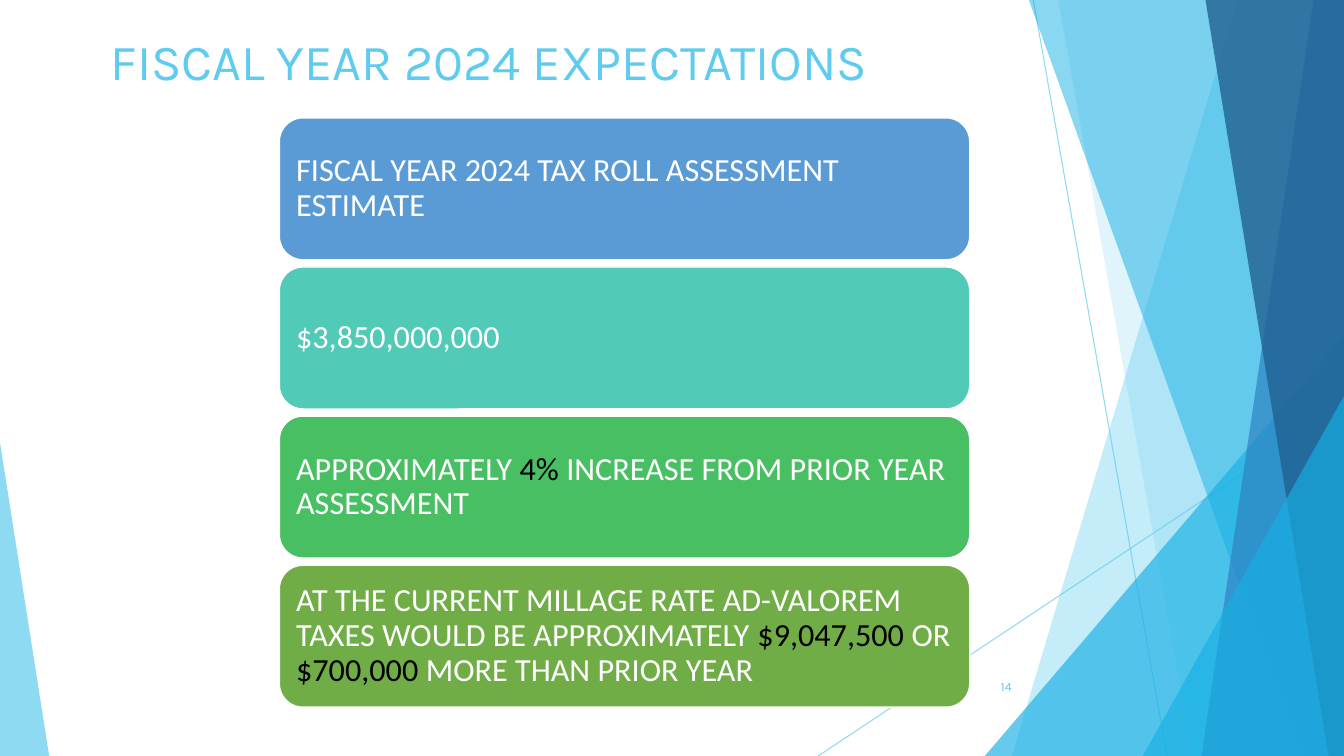
from lxml.etree import SubElement
from pptx import Presentation
from pptx.dml.color import RGBColor
from pptx.enum.shapes import MSO_CONNECTOR, MSO_SHAPE
from pptx.enum.text import MSO_ANCHOR, PP_ALIGN
from pptx.oxml.ns import qn
from pptx.util import Cm, Pt

WIDTH, HEIGHT = 33.87, 19.05  # slide size in centimetres

WHITE = RGBColor(0xFF, 0xFF, 0xFF)
BLACK = RGBColor(0x00, 0x00, 0x00)
SKY = RGBColor(0x5F, 0xCB, 0xEF)
CYAN = RGBColor(0x17, 0xB0, 0xE4)
BLUE = RGBColor(0x2E, 0x83, 0xC3)
NAVY = RGBColor(0x22, 0x62, 0x92)
CARD_BLUE = RGBColor(0x5B, 0x9B, 0xD5)
CARD_TEAL = RGBColor(0x52, 0xCA, 0xB8)
CARD_GREEN = RGBColor(0x49, 0xBF, 0x64)
CARD_OLIVE = RGBColor(0x70, 0xAD, 0x47)

# Each card: fill, then (text, colour) runs
CARDS = [
    (CARD_BLUE, [("FISCAL YEAR 2024 TAX ROLL ASSESSMENT ESTIMATE", WHITE)]),
    (CARD_TEAL, [("$3,850,000,000", WHITE)]),
    (CARD_GREEN, [("APPROXIMATELY ", WHITE), ("4%", BLACK),
                  (" INCREASE FROM PRIOR YEAR ASSESSMENT", WHITE)]),
    (CARD_OLIVE, [("AT THE CURRENT MILLAGE RATE AD-VALOREM TAXES WOULD BE APPROXIMATELY ", WHITE),
                  ("$9,047,500 ", BLACK), ("OR ", WHITE),
                  ("$700,000 ", BLACK), ("MORE THAN PRIOR YEAR", WHITE)]),
]


def set_alpha(shape, percent):
    """Make the shape's solid fill or line colour partly transparent."""
    colour = next(shape._element.spPr.iter(qn("a:srgbClr")))
    SubElement(colour, qn("a:alpha"), val=str(percent * 1000))


def paint(shape, colour, alpha):
    shape.shadow.inherit = False
    shape.fill.solid()
    shape.fill.fore_color.rgb = colour
    shape.line.fill.background()
    set_alpha(shape, alpha)


def format_run(run, size, font_name, colour):
    run.font.size = Pt(size)
    run.font.name = font_name
    run.font.color.rgb = colour


def add_ray(slide, start_x, start_y, end_x, end_y):
    ray = slide.shapes.add_connector(
        MSO_CONNECTOR.STRAIGHT, Cm(start_x), Cm(start_y), Cm(end_x), Cm(end_y))
    ray.line.color.rgb = SKY
    ray.line.width = Pt(0.75)
    set_alpha(ray, 70)
    SubElement(ray._element.spPr, qn("a:effectLst"))


def add_band(slide, top_x, bottom_x, colour, alpha):
    """Fill from a slanted left edge to the slide's right edge."""
    builder = slide.shapes.build_freeform(Cm(top_x), 0)
    corners = [(WIDTH, 0), (WIDTH, HEIGHT), (bottom_x, HEIGHT)]
    builder.add_line_segments([(Cm(x), Cm(y)) for x, y in corners], close=True)
    paint(builder.convert_to_shape(), colour, alpha)


def add_corner(slide, left, top, width, apex, colour, alpha):
    """Add a triangle standing on the slide's bottom edge."""
    triangle = slide.shapes.add_shape(
        MSO_SHAPE.ISOSCELES_TRIANGLE, Cm(left), Cm(top), Cm(width), Cm(HEIGHT - top))
    triangle.adjustments[0] = apex
    paint(triangle, colour, alpha)


def add_backdrop(slide):
    add_ray(slide, 26.04, 0, 29.41, HEIGHT)
    add_ray(slide, WIDTH, 10.24, 20.62, HEIGHT)
    add_band(slide, 31.19, 25.5, SKY, 36)
    add_band(slide, 26.67, 30.05, SKY, 20)
    add_corner(slide, 24.82, 8.46, WIDTH - 24.82, 1, CYAN, 66)
    add_band(slide, 25.93, 32.79, CYAN, 50)
    add_band(slide, 33.1, 30.28, BLUE, 70)
    add_band(slide, 30.38, 33.48, NAVY, 80)
    add_corner(slide, 28.8, 9.98, WIDTH - 28.8, 1, CYAN, 66)
    add_corner(slide, 0, 11.15, 1.24, 0, SKY, 70)


def add_label(slide, text, left, top, width, height, size, anchor, alignment):
    box = slide.shapes.add_textbox(Cm(left), Cm(top), Cm(width), Cm(height))
    frame = box.text_frame
    frame.word_wrap = True
    frame.vertical_anchor = anchor
    frame.text = text
    paragraph = frame.paragraphs[0]
    paragraph.alignment = alignment
    format_run(paragraph.runs[0], size, "Karla", SKY)


def add_card(slide, left, top, width, height, fill, runs):
    card = slide.shapes.add_shape(
        MSO_SHAPE.ROUNDED_RECTANGLE, Cm(left), Cm(top), Cm(width), Cm(height))
    card.shadow.inherit = False
    card.fill.solid()
    card.fill.fore_color.rgb = fill
    card.line.color.rgb = WHITE
    card.line.width = Pt(1)
    frame = card.text_frame
    frame.word_wrap = True
    frame.vertical_anchor = MSO_ANCHOR.MIDDLE
    frame.margin_left = frame.margin_right = Cm(0.25)
    frame.margin_top = frame.margin_bottom = Cm(0.25)
    paragraph = frame.paragraphs[0]
    paragraph.alignment = PP_ALIGN.LEFT
    paragraph.line_spacing = 0.9
    for text, colour in runs:
        run = paragraph.add_run()
        run.text = text
        format_run(run, 23, "Calibri", colour)


def add_card_stack(slide, left, top, width, height, gap=0.18):
    card_height = (height - gap * (len(CARDS) - 1)) / len(CARDS)
    for index, (fill, runs) in enumerate(CARDS):
        card_top = top + index * (card_height + gap)
        add_card(slide, left, card_top, width, card_height, fill, runs)


def main():
    presentation = Presentation()
    presentation.slide_width = Cm(WIDTH)
    presentation.slide_height = Cm(HEIGHT)
    slide = presentation.slides.add_slide(presentation.slide_layouts[6])
    add_backdrop(slide)
    add_label(slide, "FISCAL YEAR 2024 EXPECTATIONS", 2.54, 0.64, 28.78, 3.35,
              36, MSO_ANCHOR.TOP, PP_ALIGN.LEFT)
    add_label(slide, "14", 23.85, 16.79, 1.9, 1.02, 9, MSO_ANCHOR.MIDDLE, PP_ALIGN.RIGHT)
    add_card_stack(slide, 7.04, 2.97, 17.4, 14.85)
    presentation.save("out.pptx")


if __name__ == "__main__":
    main()
